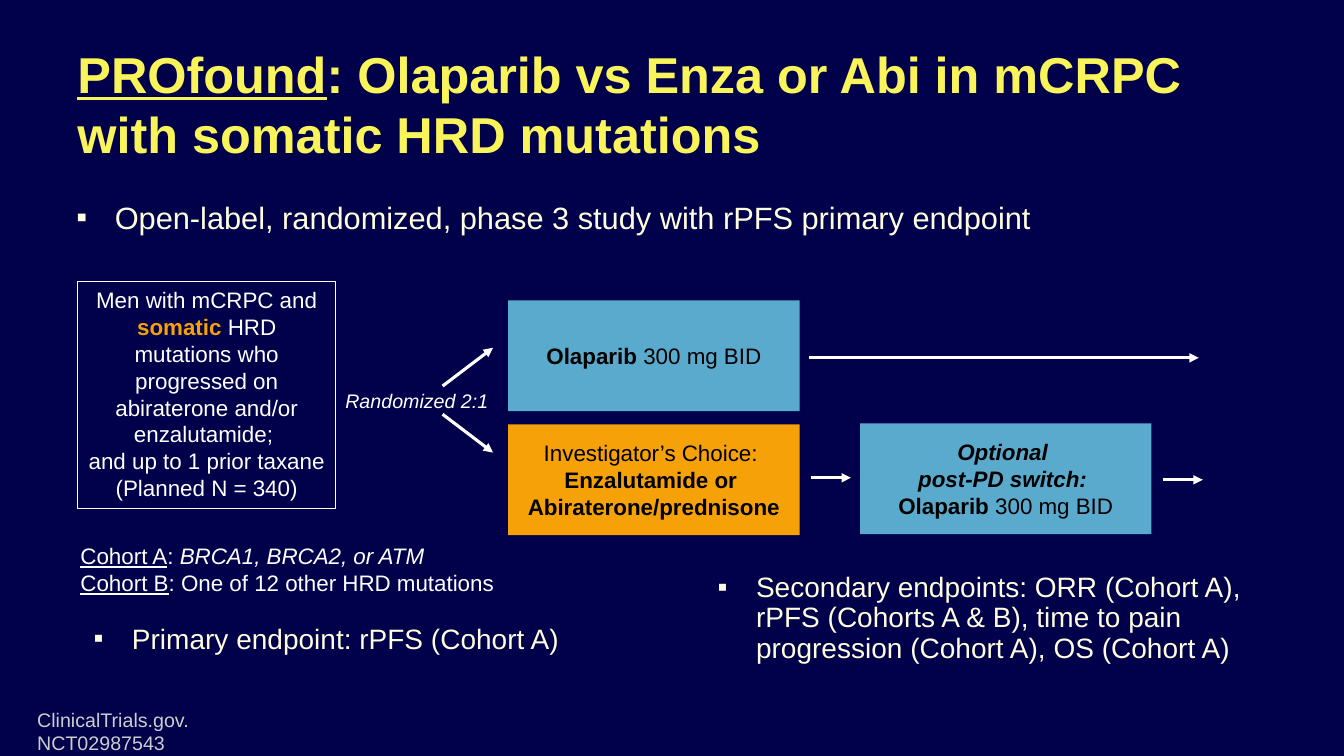
from lxml import etree
from pptx import Presentation
from pptx.dml.color import RGBColor
from pptx.enum.shapes import MSO_CONNECTOR, MSO_SHAPE
from pptx.enum.text import MSO_ANCHOR, PP_ALIGN
from pptx.oxml.ns import qn
from pptx.util import Inches, Pt

STRAIGHT = MSO_CONNECTOR.STRAIGHT
RECTANGLE = MSO_SHAPE.RECTANGLE
TOP, MIDDLE = MSO_ANCHOR.TOP, MSO_ANCHOR.MIDDLE
LEFT, CENTER = PP_ALIGN.LEFT, PP_ALIGN.CENTER

FONT = "Arial"
COLORS = {
    "background": "00004B",
    "title": "F8F45A",
    "bullet": "FEFDDE",
    "footer": "CDCDCF",
    "white": "FFFFFF",
    "black": "000000",
    "blue": "5AAACE",
    "orange": "F6A108",
}
ARM_WIDTH, ARM_HEIGHT = 2.89, 1.1


def rgb(name):
    return RGBColor.from_string(COLORS[name])


class TrialSlide:
    def __init__(self, presentation):
        self.slide = presentation.slides.add_slide(presentation.slide_layouts[6])
        background = self.slide.background.fill
        background.solid()
        background.fore_color.rgb = rgb("background")

    def set_text(self, shape, paragraphs, size, color, align=LEFT, anchor=TOP, wrap=True):
        """Fill a shape; each paragraph is a list of (text, flags[, color]), flags from "biu"."""
        frame = shape.text_frame
        frame.word_wrap = wrap
        frame.vertical_anchor = anchor
        for index, runs in enumerate(paragraphs):
            paragraph = frame.add_paragraph() if index else frame.paragraphs[0]
            paragraph.alignment = align
            for text, flags, *run_color in runs:
                if text == "\n":
                    paragraph.add_line_break()
                    continue
                run = paragraph.add_run()
                run.text = text
                font = run.font
                font.name, font.size = FONT, Pt(size)
                font.bold, font.italic, font.underline = (flag in flags for flag in "biu")
                font.color.rgb = rgb(run_color[0] if run_color else color)

    def text(self, box, paragraphs, size, color, **layout):
        shape = self.slide.shapes.add_textbox(*map(Inches, box))
        self.set_text(shape, paragraphs, size, color, **layout)
        return shape

    def bullet(self, box, text, size):
        shape = self.text(box, [[(text, "")]], size, "bullet")
        paragraph = shape.text_frame.paragraphs[0]
        paragraph.line_spacing = 0.9
        paragraph.space_before, paragraph.space_after = Pt(10), Pt(7)
        properties = paragraph._p.get_or_add_pPr()
        properties.set("marL", str(Inches(0.38)))
        properties.set("indent", str(-Inches(0.38)))
        bullet_color = etree.SubElement(properties, qn("a:buClr"))
        etree.SubElement(bullet_color, qn("a:srgbClr"), val=COLORS["bullet"])
        etree.SubElement(properties, qn("a:buFont"), typeface=FONT)
        etree.SubElement(properties, qn("a:buChar"), char="▪")

    def rectangle(self, box, paragraphs, color, fill=None, line=None, **layout):
        shape = self.slide.shapes.add_shape(RECTANGLE, *map(Inches, box))
        shape.shadow.inherit = False
        if fill:
            shape.fill.solid()
            shape.fill.fore_color.rgb = rgb(fill)
        else:
            shape.fill.background()
        if line:
            shape.line.color.rgb = rgb(line)
            shape.line.width = Pt(0.75)
        else:
            shape.line.fill.background()
        self.set_text(shape, paragraphs, 16, color, align=CENTER, **layout)

    def arm(self, left, top, fill, paragraphs):
        """Draw a treatment arm."""
        self.rectangle((left, top, ARM_WIDTH, ARM_HEIGHT), paragraphs, "black",
                       fill=fill, anchor=MIDDLE, wrap=False)

    def arrow(self, *ends):
        connector = self.slide.shapes.add_connector(STRAIGHT, *map(Inches, ends))
        connector.line.color.rgb = rgb("white")
        connector.line.width = Pt(2.25)
        properties = connector._element.spPr
        etree.SubElement(properties.find(qn("a:ln")), qn("a:tailEnd"), type="triangle")
        etree.SubElement(properties, qn("a:effectLst"))


def main():
    presentation = Presentation()
    presentation.slide_width, presentation.slide_height = Inches(13.33), Inches(7.5)
    trial = TrialSlide(presentation)

    trial.text((0.67, 0.42, 11.89, 1.21), [[
        ("PROfound", "bu"),
        (": Olaparib vs Enza or Abi in mCRPC with somatic HRD mutations", "b"),
    ]], 36, "title", anchor=MIDDLE)
    trial.bullet((0.66, 1.96, 12.19, 1.48),
                 "Open-label, randomized, phase 3 study with rPFS primary endpoint", 22)
    trial.text((0.27, 6.97, 3.05, 0.34), [[("ClinicalTrials.gov.  NCT02987543", "")]],
               14, "footer", wrap=False)

    trial.rectangle((0.77, 2.79, 2.56, 2.26), [
        [("Men with mCRPC and ", ""), ("somatic ", "b", "orange"),
         ("HRD mutations who progressed on abiraterone and/or enzalutamide; ", "")],
        [("and up to 1 prior taxane", ""), ("\n", ""), ("(Planned N = 340)", "")],
    ], "white", line="white")
    trial.text((2.58, 3.81, 3.11, 0.34), [[("Randomized 2:1", "i")]], 14, "white", align=CENTER)

    olaparib = [("Olaparib ", "b"), ("300 mg BID", "")]
    trial.arm(5.04, 2.98, "blue", [olaparib])
    trial.arm(5.04, 4.21, "orange", [
        [("Investigator’s Choice: ", "")],
        [("Enzalutamide or ", "b")],
        [("Abiraterone/prednisone", "b")],
    ])
    trial.arm(8.53, 4.2, "blue", [
        [("Optional ", "bi")],
        [("post-PD switch: ", "bi")],
        olaparib,
    ])

    for ends in (
        (4.39, 4.11, 4.89, 4.49),
        (4.39, 3.83, 4.89, 3.45),
        (8.02, 3.55, 11.89, 3.55),
        (8.04, 4.74, 8.44, 4.74),
        (11.53, 4.76, 11.93, 4.76),
    ):
        trial.arrow(*ends)

    trial.text((0.7, 5.33, 4.36, 0.64), [
        [("Cohort A", "u"), (": ", ""), ("BRCA1, BRCA2, or ATM", "i")],
        [("Cohort B", "u"), (": One of 12 other HRD mutations", "")],
    ], 16, "white", wrap=False)
    trial.bullet((0.83, 6.15, 6.22, 0.55), "Primary endpoint: rPFS (Cohort A)", 20)
    trial.bullet((7.02, 5.64, 5.68, 1.16),
                 "Secondary endpoints: ORR (Cohort A), rPFS (Cohorts A & B), "
                 "time to pain progression (Cohort A), OS (Cohort A)", 20)

    presentation.save("out.pptx")


if __name__ == "__main__":
    main()
